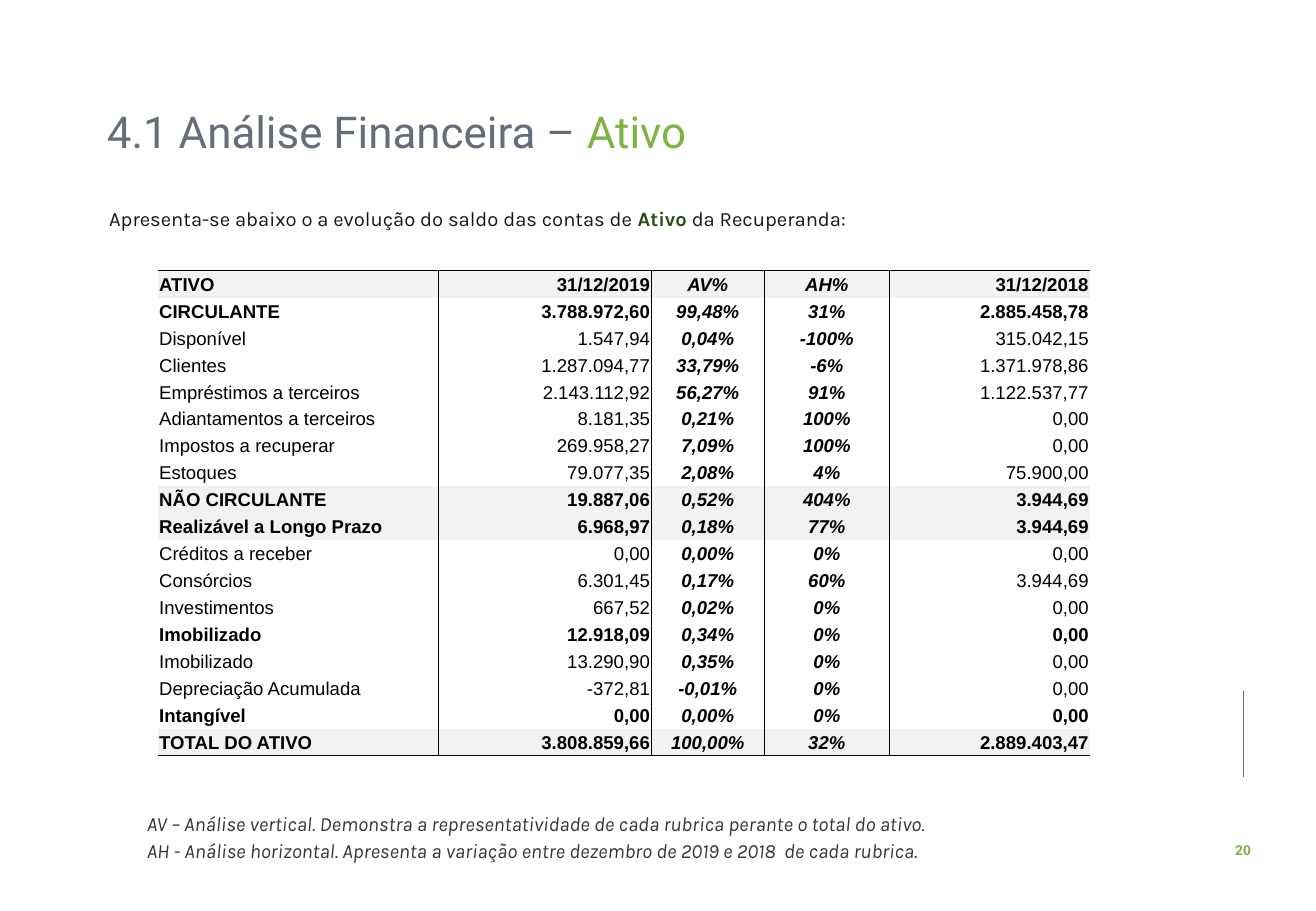
from lxml import etree
from pptx import Presentation
from pptx.dml.color import RGBColor
from pptx.enum.shapes import MSO_CONNECTOR
from pptx.enum.text import MSO_ANCHOR, MSO_AUTO_SIZE, PP_ALIGN
from pptx.oxml.ns import qn
from pptx.util import Inches, Pt

LEFT, CENTER, RIGHT = PP_ALIGN.LEFT, PP_ALIGN.CENTER, PP_ALIGN.RIGHT
JUSTIFY = PP_ALIGN.JUSTIFY
TOP, MIDDLE = MSO_ANCHOR.TOP, MSO_ANCHOR.MIDDLE
NO_AUTOFIT = MSO_AUTO_SIZE.NONE
STRAIGHT = MSO_CONNECTOR.STRAIGHT
PLAIN_TABLE_STYLE = "{2D5ABB26-0587-4C30-8999-92F81FD0307C}"

GREEN, DARK_GREEN = "7CB342", "264F17"
SLATE, INK, NOTE_GRAY = "656D78", "181717", "33363C"
BLACK, BAND = "000000", "F2F2F2"

NORMAL, BOLD, BANDED = "normal", "bold", "banded"
ROWS = [
    (BANDED, "ATIVO", "31/12/2019", "AV%", "AH%", "31/12/2018"),
    (BOLD, "CIRCULANTE", "3.788.972,60", "99,48%", "31%", "2.885.458,78"),
    (NORMAL, "Disponível", "1.547,94", "0,04%", "-100%", "315.042,15"),
    (NORMAL, "Clientes", "1.287.094,77", "33,79%", "-6%", "1.371.978,86"),
    (NORMAL, "Empréstimos a terceiros", "2.143.112,92", "56,27%", "91%", "1.122.537,77"),
    (NORMAL, "Adiantamentos a terceiros", "8.181,35", "0,21%", "100%", "0,00"),
    (NORMAL, "Impostos a recuperar", "269.958,27", "7,09%", "100%", "0,00"),
    (NORMAL, "Estoques", "79.077,35", "2,08%", "4%", "75.900,00"),
    (BANDED, "NÃO CIRCULANTE", "19.887,06", "0,52%", "404%", "3.944,69"),
    (BANDED, "Realizável a Longo Prazo", "6.968,97", "0,18%", "77%", "3.944,69"),
    (NORMAL, "Créditos a receber", "0,00", "0,00%", "0%", "0,00"),
    (NORMAL, "Consórcios", "6.301,45", "0,17%", "60%", "3.944,69"),
    (NORMAL, "Investimentos", "667,52", "0,02%", "0%", "0,00"),
    (BOLD, "Imobilizado", "12.918,09", "0,34%", "0%", "0,00"),
    (NORMAL, "Imobilizado", "13.290,90", "0,35%", "0%", "0,00"),
    (NORMAL, "Depreciação Acumulada", "-372,81", "-0,01%", "0%", "0,00"),
    (BOLD, "Intangível", "0,00", "0,00%", "0%", "0,00"),
    (BANDED, "TOTAL DO ATIVO", "3.808.859,66", "100,00%", "32%", "2.889.403,47"),
]
COLUMN_WIDTHS = [2.31, 1.75, 0.93, 1.03, 1.65]
COLUMN_ALIGNMENTS = [LEFT, RIGHT, CENTER, CENTER, RIGHT]
PERCENT_COLUMNS = (2, 3)


def rgb(value):
    return RGBColor.from_string(value)


class SlideBuilder:
    title_font, body_font, table_font = "Roboto", "Karla", "Arial"

    def __init__(self, presentation):
        self.slide = presentation.slides.add_slide(presentation.slide_layouts[5])

    def format_font(self, font, name, size, color, bold=False, italic=False):
        font.name, font.size = name, Pt(size)
        font.bold, font.italic = bold, italic
        font.color.rgb = rgb(color)

    def fill_paragraph(self, paragraph, parts, name, size, alignment, spacing=1.0,
                       italic=False):
        """Write parts of (text, colour, bold) as runs."""
        paragraph.alignment = alignment
        paragraph.line_spacing = spacing
        for text, color, bold in parts:
            run = paragraph.add_run()
            run.text = text
            self.format_font(run.font, name, size, color, bold, italic)

    def title(self, left, top, width, height, parts):
        shape = self.slide.shapes.title
        shape.left, shape.top = Inches(left), Inches(top)
        shape.width, shape.height = Inches(width), Inches(height)
        frame = shape.text_frame
        frame.auto_size = NO_AUTOFIT
        frame.vertical_anchor = TOP
        self.fill_paragraph(frame.paragraphs[0], parts, self.title_font, 26, LEFT, 0.9)

    def text(self, left, top, width, height, paragraphs, size=12, name=body_font,
             alignment=JUSTIFY, spacing=1.0, italic=False, first_indent=0, wrap=True):
        shape = self.slide.shapes.add_textbox(
            Inches(left), Inches(top), Inches(width), Inches(height))
        frame = shape.text_frame
        frame.word_wrap = wrap
        for index, parts in enumerate(paragraphs):
            paragraph = frame.add_paragraph() if index else frame.paragraphs[0]
            if first_indent:
                properties = paragraph._p.get_or_add_pPr()
                properties.set("marL", "0")
                properties.set("indent", str(Inches(first_indent)))
            self.fill_paragraph(paragraph, parts, name, size, alignment, spacing, italic)

    def line(self, x1, y1, x2, y2, color):
        connector = self.slide.shapes.add_connector(
            STRAIGHT, Inches(x1), Inches(y1), Inches(x2), Inches(y2))
        connector.line.color.rgb = rgb(color)
        connector.line.width = Pt(0.5)
        etree.SubElement(connector._element.spPr, qn("a:effectLst"))

    def borders(self, cell, sides):
        """Draw thin borders on the named sides, given in the order L, R, T, B."""
        properties = cell._tc.get_or_add_tcPr()
        for side in sides:
            border = etree.SubElement(properties, qn(f"a:ln{side}"), w=str(Pt(0.5)))
            fill = etree.SubElement(border, qn("a:solidFill"))
            etree.SubElement(fill, qn("a:srgbClr"), val=BLACK)

    def table(self, left, top, height, rows):
        shape = self.slide.shapes.add_table(
            len(rows), len(COLUMN_WIDTHS), Inches(left), Inches(top),
            Inches(sum(COLUMN_WIDTHS)), Inches(height))
        table = shape.table
        table.first_row = table.horz_banding = False
        table._tbl.tblPr.find(qn("a:tableStyleId")).text = PLAIN_TABLE_STYLE
        for column, width in zip(table.columns, COLUMN_WIDTHS):
            column.width = Inches(width)
        for row_index, (kind, *values) in enumerate(rows):
            for column_index, value in enumerate(values):
                cell = table.cell(row_index, column_index)
                percent = column_index in PERCENT_COLUMNS
                sides = [side for side, drawn in (
                    ("L", column_index > 0),
                    ("R", column_index < len(values) - 1),
                    ("T", row_index == 0),
                    ("B", row_index == len(rows) - 1)) if drawn]
                self.table_cell(cell, value, COLUMN_ALIGNMENTS[column_index],
                                percent or kind != NORMAL, percent, kind == BANDED, sides)

    def table_cell(self, cell, value, alignment, bold, italic, banded, sides):
        cell.margin_left = cell.margin_right = cell.margin_top = Inches(0.01)
        cell.margin_bottom = 0
        cell.vertical_anchor = MIDDLE
        self.borders(cell, sides)
        if banded:
            cell.fill.solid()
            cell.fill.fore_color.rgb = rgb(BAND)
        else:
            cell.fill.background()
        self.fill_paragraph(cell.text_frame.paragraphs[0], [(value, BLACK, bold)],
                            self.table_font, 11, alignment, italic=italic)


def main():
    presentation = Presentation()
    presentation.slide_width, presentation.slide_height = Inches(10.83), Inches(7.5)
    builder = SlideBuilder(presentation)
    builder.line(10.23, 5.69, 10.23, 6.4, SLATE)
    builder.text(10.06, 6.88, 0.34, 0.24, [[("20", GREEN, True)]], size=8.1,
                 name=builder.title_font, alignment=CENTER, wrap=False)
    builder.title(0.78, 0.86, 8.18, 0.53, [
        ("4.1 Análise Financeira – ", SLATE, False), ("Ativo", GREEN, False)])
    builder.text(0.8, 1.55, 8.7, 0.37, [[
        ("Apresenta-se abaixo o a evolução do saldo das contas de ", INK, False),
        ("Ativo", DARK_GREEN, True),
        (" da Recuperanda:", INK, False)]], spacing=1.5)
    notes = [
        "AV – Análise vertical. Demonstra a representatividade de cada rubrica "
        "perante o total do ativo.",
        "AH - Análise horizontal. Apresenta a variação entre dezembro de 2019 e 2018  "
        "de cada rubrica.",
    ]
    builder.text(0.8, 6.6, 8.7, 0.55, [[(note, NOTE_GRAY, False)] for note in notes],
                 spacing=1.14, italic=True, first_indent=0.31)
    builder.table(1.3, 2.23, 3.99, ROWS)
    presentation.save("out.pptx")


if __name__ == "__main__":
    main()
